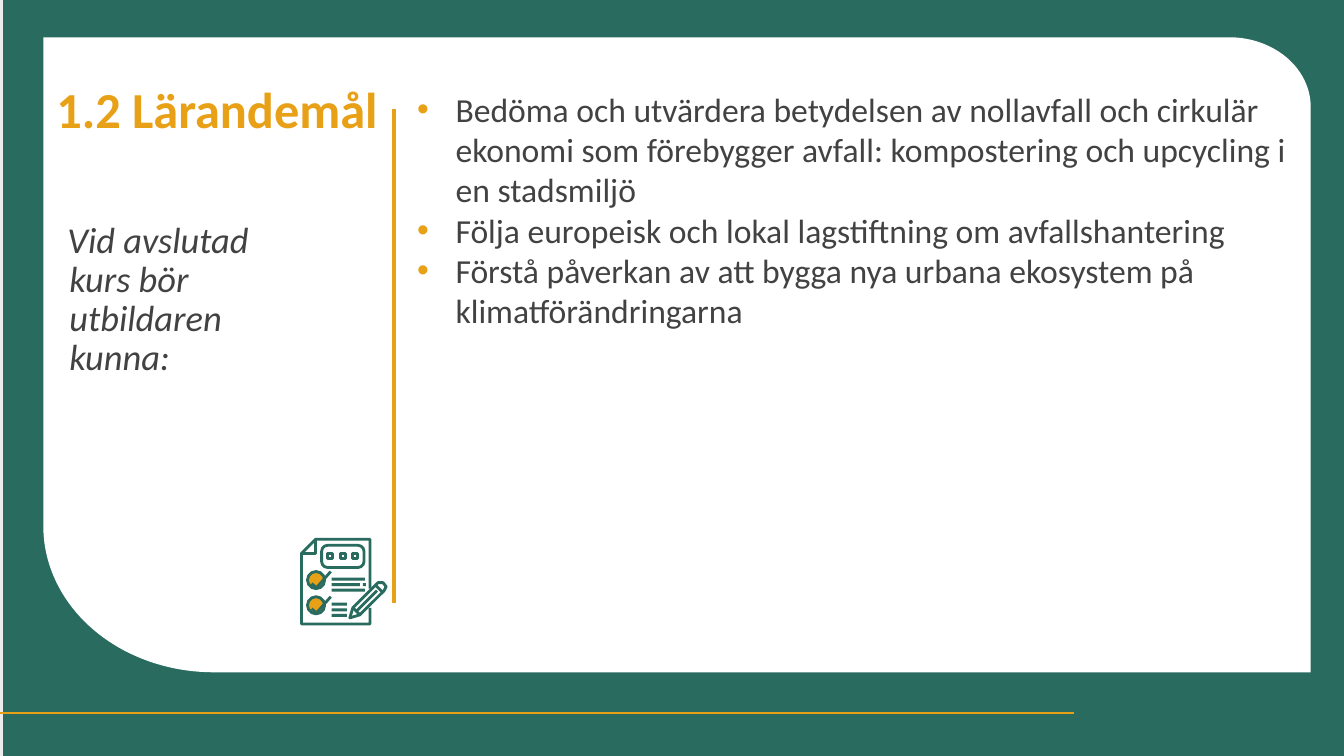
import math

import pptx
import pptx.dml.color
import pptx.enum.shapes
import pptx.enum.text
import pptx.oxml
import pptx.oxml.ns
import pptx.util

Inches = pptx.util.Inches
Pt = pptx.util.Pt
SHAPE = pptx.enum.shapes.MSO_SHAPE

COLORS = {
    "green": "296B5F",
    "amber": "E8A116",
    "white": "FFFFFF",
    "edge": "ECECEC",
    "text": "424242",
}
FONT = "Calibri"
STROKE = 2


def rgb(name):
    return pptx.dml.color.RGBColor.from_string(COLORS[name])


def paint(shape, fill=None, line=None, width=STROKE):
    shape.shadow.inherit = False
    if fill:
        shape.fill.solid()
        shape.fill.fore_color.rgb = rgb(fill)
    else:
        shape.fill.background()
    if line:
        shape.line.color.rgb = rgb(line)
        shape.line.width = Pt(width)
    else:
        shape.line.fill.background()
    return shape


def add_block(slide, kind, box, **look):
    return paint(slide.shapes.add_shape(kind, *map(Inches, box)), **look)


def add_outline(slide, left, top, points, closed=False, **look):
    spots = [(Inches(left + x), Inches(top + y)) for x, y in points]
    builder = slide.shapes.build_freeform(*spots[0])
    builder.add_line_segments(spots[1:], close=closed)
    return paint(builder.convert_to_shape(), **look)


def add_rule(slide, start, end, width):
    rule = slide.shapes.add_connector(
        pptx.enum.shapes.MSO_CONNECTOR.STRAIGHT, *map(Inches, start + end))
    rule.line.color.rgb = rgb("amber")
    rule.line.width = Pt(width)
    rule._element.spPr.append(pptx.oxml.parse_xml(
        f"<a:effectLst {pptx.oxml.ns.nsdecls('a')}/>"))


def add_text(slide, box, paragraphs, size, color="text", bold=False,
             italic=False, spacing=1.0, indent=0, bullet=None):
    frame = slide.shapes.add_textbox(*map(Inches, box)).text_frame
    frame.word_wrap = True
    frame.vertical_anchor = pptx.enum.text.MSO_ANCHOR.TOP
    for index, words in enumerate(paragraphs):
        paragraph = frame.paragraphs[0] if index == 0 else frame.add_paragraph()
        paragraph.line_spacing = spacing
        properties = paragraph._p.get_or_add_pPr()
        properties.set("marL", str(Inches(indent)))
        properties.set("indent", str(-Inches(indent)))
        if bullet:
            namespace = pptx.oxml.ns.nsdecls("a")
            for xml in (
                f'<a:buClr {namespace}><a:srgbClr val="{COLORS[bullet]}"/></a:buClr>',
                f'<a:buFont {namespace} typeface="Arial"/>',
                f'<a:buChar {namespace} char="•"/>',
            ):
                properties.append(pptx.oxml.parse_xml(xml))
        run = paragraph.add_run()
        run.text = words
        run.font.name = FONT
        run.font.size = Pt(size)
        run.font.bold = bold
        run.font.italic = italic
        run.font.color.rgb = rgb(color)


def corner(center_x, center_y, radius_x, radius_y, start, steps=40):
    angles = [math.radians(start + 90 * step / steps) for step in range(steps + 1)]
    return [(center_x + radius_x * math.cos(angle),
             center_y + radius_y * math.sin(angle)) for angle in angles]


def draw_background(slide, box):
    left, top, width, height = box
    add_block(slide, SHAPE.RECTANGLE, box, fill="green")
    panel_width, panel_height = 12.57, 6.3
    panel = [(0, 0)]
    panel += corner(panel_width - 0.81, 0.69, 0.81, 0.69, -90)
    panel += [(panel_width, panel_height)]
    panel += corner(1.69, panel_height - 1.45, 1.69, 1.45, 90)
    add_outline(slide, left + 0.43, top + 0.37, panel, closed=True, fill="white")
    add_block(slide, SHAPE.RECTANGLE, (left, top, 0.03, height), fill="edge")
    add_rule(slide, (left, top + 7.07), (left + 10.65, top + 7.07), 1.5)


def draw_checklist(slide, left, top):
    def stroke(points, closed=False):
        add_outline(slide, left, top, points, closed, line="green")

    def block(kind, x, y, width, height, **look):
        return add_block(slide, kind, (left + x, top + y, width, height), **look)

    stroke([(0.69, 0.5), (0.69, 0.01), (0.15, 0.01), (0.01, 0.15),
            (0.01, 0.85), (0.69, 0.85), (0.69, 0.69)])
    stroke([(0.15, 0.01), (0.15, 0.15), (0.01, 0.15)])

    badge = block(SHAPE.ROUNDED_RECTANGLE, 0.21, 0.07, 0.42, 0.22, line="green")
    badge.adjustments[0] = 0.27
    for column in range(3):
        block(SHAPE.RECTANGLE, 0.27 + 0.125 * column, 0.15, 0.05, 0.05, line="green")

    for y in (0.41, 0.66):
        block(SHAPE.OVAL, 0.07, y - 0.08, 0.17, 0.17, fill="amber", line="green")
        stroke([(0.11, y + 0.04), (0.16, y + 0.08), (0.3, y - 0.08)])

    for y, width in ((0.39, 0.33), (0.445, 0.28), (0.5, 0.33),
                     (0.64, 0.15), (0.695, 0.15), (0.75, 0.15)):
        block(SHAPE.RECTANGLE, 0.31, y, width, 0.03, fill="green")
    block(SHAPE.RECTANGLE, 0.62, 0.445, 0.03, 0.03, fill="green")

    stroke([(0.49, 0.79), (0.52, 0.69), (0.77, 0.44), (0.82, 0.44),
            (0.85, 0.48), (0.83, 0.52), (0.59, 0.76)], closed=True)
    stroke([(0.52, 0.69), (0.59, 0.76)])
    stroke([(0.56, 0.72), (0.76, 0.52)])
    stroke([(0.75, 0.47), (0.81, 0.53)])


def draw_goal(slide, box):
    left, top, width, height = box
    add_text(slide, (left, top, width, 0.88), ["1.2 Lärandemål"], 36,
             color="amber", bold=True, spacing=0.9)
    add_text(slide, (left + 0.11, top + 1.36, 2.48, 2.13),
             ["Vid avslutad kurs bör utbildaren kunna:"], 26,
             italic=True, spacing=0.9, indent=0.02)
    add_rule(slide, (left + width, top + 0.29), (left + width, top + height), 2.75)
    draw_checklist(slide, left + 2.52, top + 4.55)


def draw_outcomes(slide, box):
    add_text(slide, box, [
        "Bedöma och utvärdera betydelsen av nollavfall och cirkulär ekonomi "
        "som förebygger avfall: kompostering och upcycling i en stadsmiljö",
        "Följa europeisk och lokal lagstiftning om avfallshantering",
        "Förstå påverkan av att bygga nya urbana ekosystem på "
        "klimatförändringarna",
    ], 24, indent=0.38, bullet="amber")


def main():
    deck = pptx.Presentation()
    deck.slide_width, deck.slide_height = Inches(13.33), Inches(7.5)
    slide = deck.slides.add_slide(deck.slide_layouts[6])
    draw_background(slide, (0, 0, 13.33, 7.5))
    draw_goal(slide, (0.46, 0.79, 3.45, 5.19))
    draw_outcomes(slide, (4.04, 0.83, 8.83, 5.61))
    deck.save("out.pptx")


if __name__ == "__main__":
    main()
